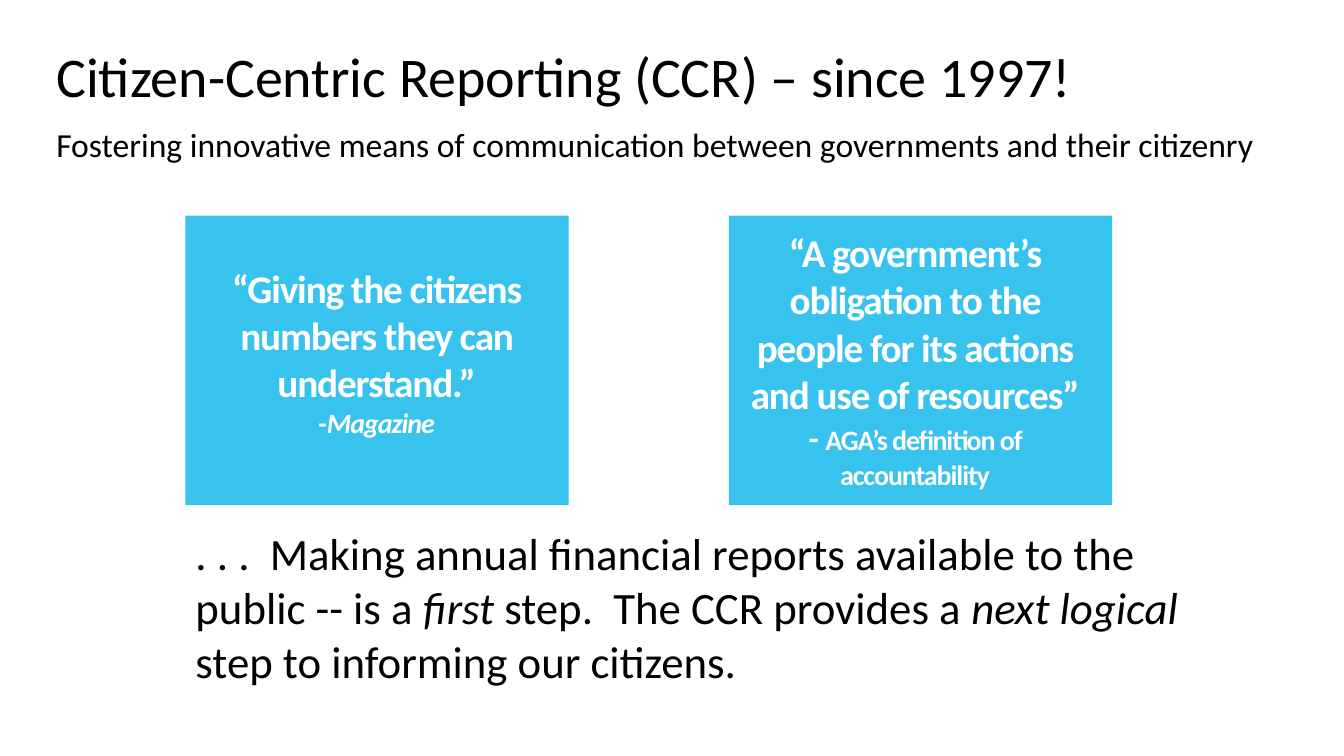
from pptx import Presentation
from pptx.dml.color import RGBColor
from pptx.enum.shapes import MSO_SHAPE
from pptx.enum.text import PP_ALIGN
from pptx.util import Inches, Pt

RECT = MSO_SHAPE.RECTANGLE
LEFT, CENTER = PP_ALIGN.LEFT, PP_ALIGN.CENTER
BLACK = RGBColor(0x00, 0x00, 0x00)
WHITE = RGBColor(0xFF, 0xFF, 0xFF)
SKY = RGBColor(0x38, 0xC3, 0xEF)

# Grid in inches: heading margin and two card columns
MARGIN = 0.46
COLS = (1.84, 7.23)
CARD_TOP, CARD_W, CARD_H = 2.14, 3.8, 2.87

prs = Presentation()
prs.slide_width, prs.slide_height = Inches(13.33), Inches(7.5)
s = prs.slides.add_slide(prs.slide_layouts[6])


def add_text(paragraphs, x, y, w, h, color=BLACK, bold=False, align=LEFT, spacing=0):
    """Each paragraph is a list of (text, size, italic) runs."""
    tf = s.shapes.add_textbox(*map(Inches, (x, y, w, h))).text_frame
    tf.word_wrap = True
    for i, runs in enumerate(paragraphs):
        p = tf.paragraphs[0] if i == 0 else tf.add_paragraph()
        p.alignment = align
        for text, size, italic in runs:
            r = p.add_run()
            r.text = text
            r.font.name, r.font.size = "Calibri", Pt(size)
            r.font.bold, r.font.italic = bold, italic
            r.font.color.rgb = color
            if spacing:
                r.font._element.set("spc", str(round(spacing * 100)))


# Heading
add_text([[("Citizen-Centric Reporting (CCR) – since 1997!", 40, False)]],
         MARGIN, 0.36, 11.77, 0.77)
add_text([[("Fostering innovative means of communication between governments "
            "and their citizenry", 24, False)]],
         MARGIN, 1.18, 12.41, 0.5)

# Quote cards: text box offset and size, then quote and source
cards = [
    ((0.14, 0.43, 3.51, 2.22), [
        [("“Giving the citizens numbers they can understand.”", 28, False)],
        [("-", 20, False), ("Magazine", 20, True)]]),
    ((0, 0.08, 3.69, 3.1), [
        [("“A government’s obligation to the people for its actions "
          "and use of resources”", 28, False)],
        [("- ", 24, False), ("AGA’s definition of accountability", 20, False)]]),
]
for x, ((dx, dy, w, h), quote) in zip(COLS, cards):
    sp = s.shapes.add_shape(RECT, *map(Inches, (x, CARD_TOP, CARD_W, CARD_H)))
    sp.shadow.inherit = False
    sp.fill.solid()
    sp.fill.fore_color.rgb = SKY
    sp.line.fill.background()
    add_text(quote, x + dx, CARD_TOP + dy, w, h,
             color=WHITE, bold=True, align=CENTER, spacing=-0.8)

# Closing statement
add_text([[(". . .  Making annual financial reports available to the public -- is a ", 32, False),
           ("first ", 32, True),
           ("step.  The CCR provides a ", 32, False),
           ("next logical ", 32, True),
           ("step to informing our citizens.", 32, False)]],
         COLS[0], 5.17, 10.08, 1.72)

prs.save("out.pptx")
